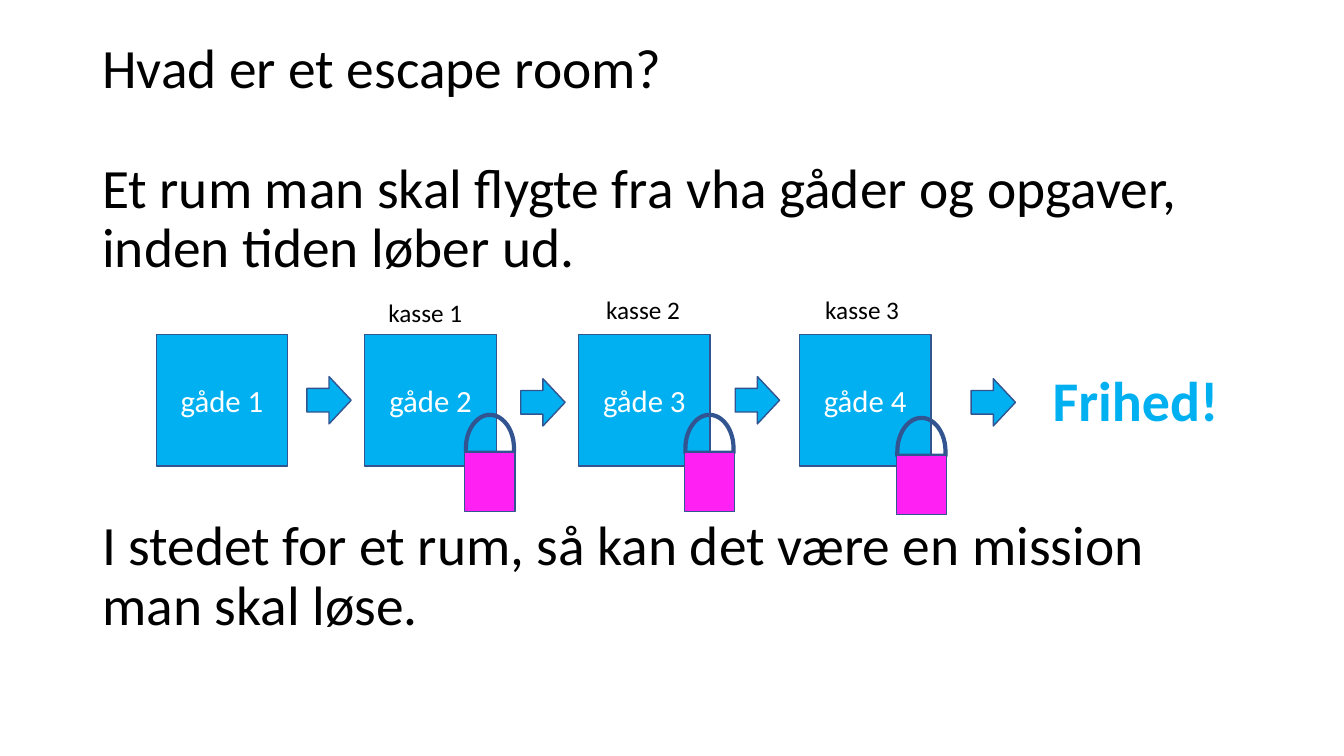
"""Build the slide that explains an escape room as a chain of locked riddles."""
from math import cos, pi, sin

from pptx import Presentation
from pptx.dml.color import RGBColor
from pptx.enum.shapes import MSO_SHAPE
from pptx.enum.text import MSO_ANCHOR, PP_ALIGN
from pptx.util import Pt

BLACK = RGBColor(0x00, 0x00, 0x00)
WHITE = RGBColor(0xFF, 0xFF, 0xFF)
SKY = RGBColor(0x00, 0xB0, 0xF0)
NAVY = RGBColor(0x32, 0x54, 0x91)
PINK = RGBColor(0xFF, 0x20, 0xF3)

deck = Presentation()
deck.slide_width, deck.slide_height = Pt(960), Pt(540)
page = deck.slides.add_slide(deck.slide_layouts[6])


def add_block(kind, left, top, width, height, fill):
    block = page.shapes.add_shape(kind, Pt(left), Pt(top), Pt(width), Pt(height))
    block.shadow.inherit = False
    block.fill.solid()
    block.fill.fore_color.rgb = fill
    block.line.color.rgb = NAVY
    block.line.width = Pt(1)
    return block


def set_text(para, text, size, color, bold=False):
    para.text = text
    para.font.name = "Calibri"
    para.font.size = Pt(size)
    para.font.color.rgb = color
    para.font.bold = bold


box = page.shapes.add_textbox(Pt(66), Pt(26), Pt(828), Pt(514))
frame = box.text_frame
frame.word_wrap = True
story = [
    ("Hvad er et escape room?", 0),
    ("Et rum man skal flygte fra vha gåder og opgaver, inden tiden løber ud.", 43),
    ("I stedet for et rum, så kan det være en mission\vman skal løse.", 171),
]
for index, (text, gap) in enumerate(story):
    para = frame.add_paragraph() if index else frame.paragraphs[0]
    set_text(para, text, 39.6, BLACK)
    para.line_spacing = 0.89
    if gap:
        para.space_before = Pt(gap)

for number, left in enumerate([111.6, 260.6, 413.3, 571], start=1):
    riddle = add_block(MSO_SHAPE.RECTANGLE, left, 239, 94, 94, SKY)
    riddle.text_frame.word_wrap = False
    riddle.text_frame.vertical_anchor = MSO_ANCHOR.MIDDLE
    para = riddle.text_frame.paragraphs[0]
    set_text(para, f"gåde {number}", 22, WHITE)
    para.alignment = PP_ALIGN.CENTER

for left, top in [(219.2, 269), (372, 270.5), (525.2, 269), (693.7, 270.5)]:
    add_block(MSO_SHAPE.RIGHT_ARROW, left, top, 31.7, 33.8, SKY)

labels = [
    ("kasse 1", 270, 209, 67.7, 28.8, 18, BLACK, False),
    ("kasse 2", 425.5, 206.5, 67.7, 28.8, 18, BLACK, False),
    ("kasse 3", 582, 206.5, 67.7, 28.8, 18, BLACK, False),
    ("Frihed!", 743.8, 257.8, 134.6, 55.4, 40, SKY, True),
]
for text, left, top, width, height, size, color, bold in labels:
    label = page.shapes.add_textbox(Pt(left), Pt(top), Pt(width), Pt(height))
    label.text_frame.word_wrap = False
    para = label.text_frame.paragraphs[0]
    set_text(para, text, size, color, bold)
    para.alignment = PP_ALIGN.CENTER

STEPS = 24
for left, top in [(332, 323.3), (488.8, 323.3), (640.2, 325.5)]:
    radius, rise, foot = 17.2, 24, 3
    middle = left + 18
    arch = [
        (Pt(middle - radius * cos(pi * step / STEPS)),
         Pt(top - foot - rise * sin(pi * step / STEPS)))
        for step in range(STEPS + 1)
    ]
    builder = page.shapes.build_freeform(Pt(middle - radius), Pt(top))
    builder.add_line_segments(arch + [(Pt(middle + radius), Pt(top))], close=True)
    shackle = builder.convert_to_shape()
    shackle.shadow.inherit = False
    shackle.fill.background()
    shackle.line.color.rgb = NAVY
    shackle.line.width = Pt(3)
    add_block(MSO_SHAPE.RECTANGLE, left, top, 36, 42, PINK)

deck.save("out.pptx")
